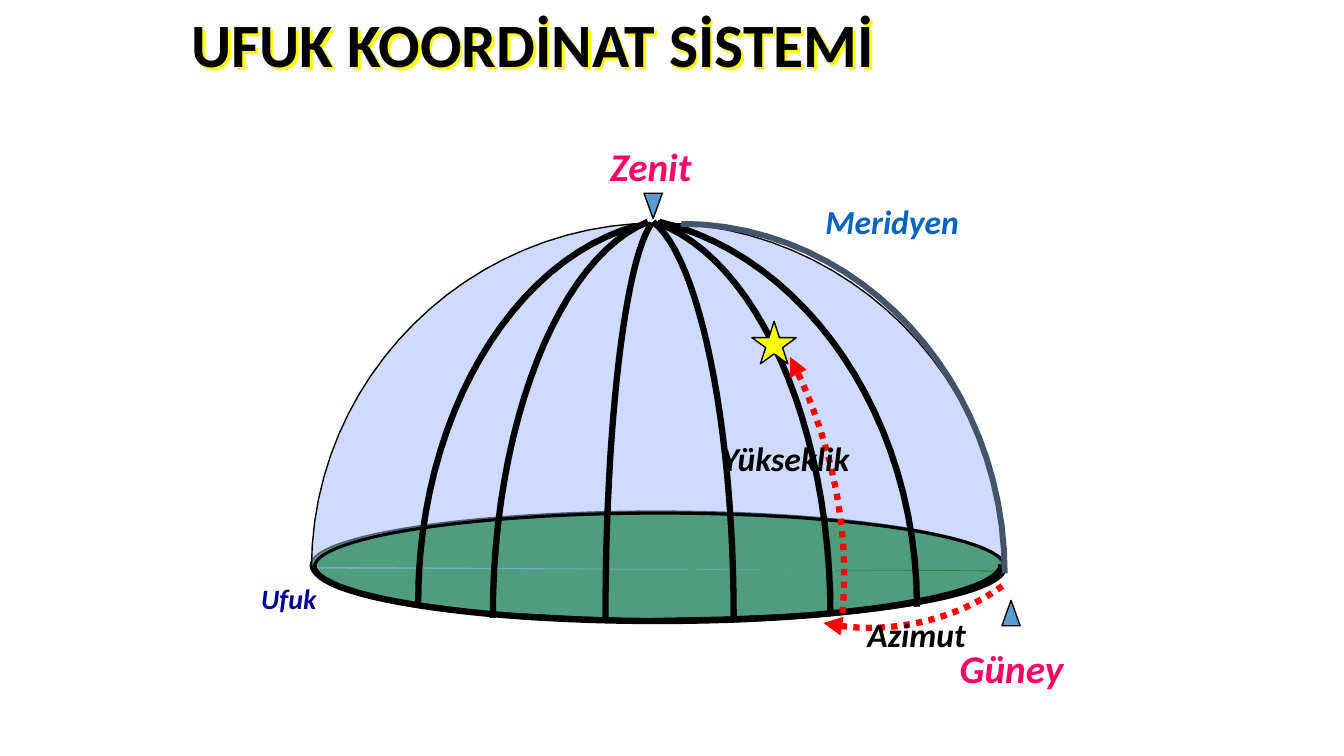
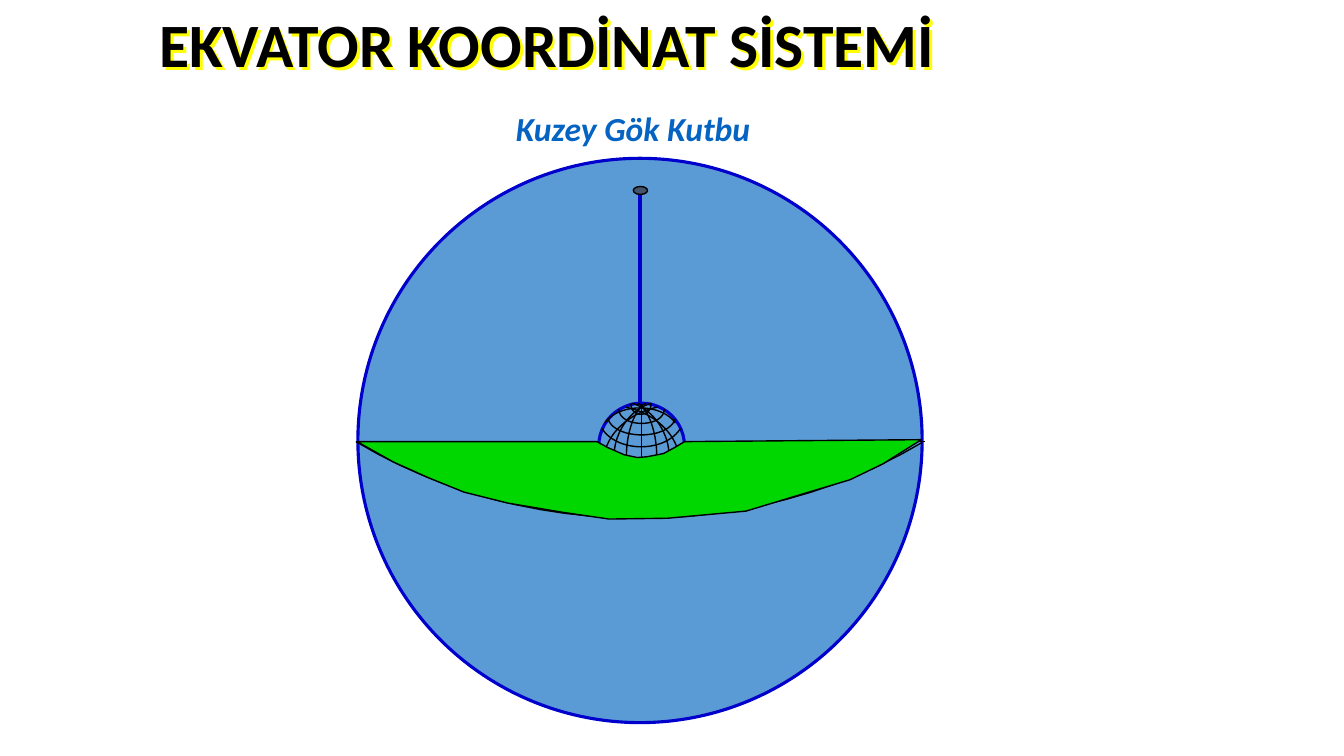
from typing import NamedTuple

from lxml.etree import SubElement
from pptx import Presentation
from pptx.dml.color import RGBColor
from pptx.enum.dml import MSO_LINE
from pptx.enum.shapes import MSO_CONNECTOR, MSO_SHAPE
from pptx.enum.text import MSO_ANCHOR, MSO_AUTO_SIZE, PP_ALIGN
from pptx.oxml.ns import qn
from pptx.util import Cm, Pt

BLACK, RED, YELLOW, PINK = "000000", "FF0000", "FFFF00", "FF0066"
GROUND, SKY, BLUE, SLATE = "008000", "9EB9FE", "5B9BD5", "44546A"
NAVY, LINK, DEEP, GREEN = "0000CC", "0563C1", "000099", "00D600"
FONT = "Calibri"
TITLE_ONLY = 5
STEPS = 24


class Box(NamedTuple):
    """A region of the page in centimetres."""
    left: float
    top: float
    width: float
    height: float

    def inner(self, x, y, width=0, height=0):
        """Return a box placed relative to this one."""
        return Box(self.left + x, self.top + y, width, height)

    def lengths(self):
        """Return left, top, width and height as lengths."""
        return [Cm(value) for value in self]


def rgb(value):
    """Turn a hex string into a colour."""
    return RGBColor.from_string(value)


def style(shape, fill=None, alpha=None, line=BLACK, weight=1, dotted=False, arrow=None):
    """Set the fill, transparency, outline and arrowhead of a shape."""
    shape.shadow.inherit = False
    if fill:
        shape.fill.solid()
        shape.fill.fore_color.rgb = rgb(fill)
    else:
        shape.fill.background()
    if alpha:
        color = shape.fill._xPr.find(qn("a:solidFill"))[0]
        SubElement(color, qn("a:alpha"), val=str(alpha * 1000))
    if not line:
        shape.line.fill.background()
        return
    shape.line.color.rgb = rgb(line)
    shape.line.width = Pt(weight)
    if dotted:
        shape.line.dash_style = MSO_LINE.ROUND_DOT
    if arrow:
        SubElement(shape.line._get_or_add_ln(), qn(f"a:{arrow}"), type="triangle")


def preset(page, kind, box, rotation=0, **look):
    """Add a preset shape."""
    shape = page.shapes.add_shape(kind, *box.lengths())
    shape.rotation = rotation
    style(shape, **look)


def outline(page, box, points, close=False, **look):
    """Draw an outline through points given relative to the box."""
    spots = [(Cm(box.left + x), Cm(box.top + y)) for x, y in points]
    builder = page.shapes.build_freeform(*spots[0])
    builder.add_line_segments(spots[1:], close=close)
    style(builder.convert_to_shape(), **look)


def straight(page, box, start, end, color=BLACK, weight=1):
    """Draw a straight line between two points of the box."""
    ends = [Cm(v) for x, y in (start, end) for v in (box.left + x, box.top + y)]
    line = page.shapes.add_connector(MSO_CONNECTOR.STRAIGHT, *ends)
    line.line.color.rgb = rgb(color)
    line.line.width = Pt(weight)
    SubElement(line._element.spPr, qn("a:effectLst"))


def bezier(*controls):
    """Return points along a cubic curve with four control points."""
    points = []
    for step in range(STEPS + 1):
        t = step / STEPS
        weights = ((1 - t) ** 3, 3 * t * (1 - t) ** 2, 3 * t * t * (1 - t), t ** 3)
        points.append(tuple(sum(w * c[axis] for w, c in zip(weights, controls))
                            for axis in (0, 1)))
    return points


def sweep(start, end, lead=(0.55, 0), trail=(1, 0.45)):
    """Return a curve whose controls are fractions of its span."""
    middle = [tuple(a + (b - a) * part for a, b, part in zip(start, end, parts))
              for parts in (lead, trail)]
    return bezier(start, *middle, end)


def arch(left, peak, right):
    """Return two quarter ellipses that meet at the peak."""
    return sweep(left, peak, (0, 0.55), (0.45, 1)) + sweep(peak, right)[1:]


def bow(left, right, depth, lean=0.2):
    """Return a symmetric sagging curve."""
    shift = (right[0] - left[0]) * lean
    drop = depth * 4 / 3
    return bezier(left, (left[0] + shift, left[1] + drop),
                  (right[0] - shift, right[1] + drop), right)


def write(frame, text, size=24, color=BLACK, italic=True, align=PP_ALIGN.CENTER,
          anchor=MSO_ANCHOR.TOP, spacing=1.0):
    """Put one formatted bold paragraph into a text frame."""
    frame.word_wrap = True
    frame.auto_size = MSO_AUTO_SIZE.NONE
    frame.vertical_anchor = anchor
    para = frame.paragraphs[0]
    para.alignment = align
    para.line_spacing = spacing
    span = para.add_run()
    span.text = text
    span.font.name, span.font.size = FONT, Pt(size)
    span.font.bold, span.font.italic = True, italic
    span.font.color.rgb = rgb(color)


def label(page, box, text, **look):
    """Add a text label."""
    write(page.shapes.add_textbox(*box.lengths()).text_frame, text, **look)


def titled_page(deck, text, left):
    """Add a page with a bold title that casts a yellow shadow."""
    page = deck.slides.add_slide(deck.slide_layouts[TITLE_ONLY])
    title = page.shapes.title
    title.left, title.top, title.width, title.height = Box(left, 0, 24.77, 2.39).lengths()
    write(title.text_frame, text, size=44, italic=False, align=PP_ALIGN.LEFT,
          anchor=MSO_ANCHOR.MIDDLE, spacing=0.9)
    effects = SubElement(title._element.spPr, qn("a:effectLst"))
    shadow = SubElement(effects, qn("a:outerShdw"), dist="35921", dir="2700000",
                        algn="ctr", rotWithShape="0")
    SubElement(shadow, qn("a:srgbClr"), val=YELLOW)
    return page


def sky_dome(page, box):
    """Draw the half sky above the horizon with its meridians and the star."""
    preset(page, MSO_SHAPE.OVAL, box.inner(0, 7.29, 17.42, 2.74), fill=GROUND)
    near_edge = [(0, 8.69), (0.36, 8.99), (0.99, 9.3), (2.13, 9.58), (4.04, 9.83),
                 (5.87, 9.91), (6.76, 9.96), (8.2, 10.01), (10.57, 9.96),
                 (13.61, 9.83), (15.24, 9.65), (16.51, 9.35), (17.22, 9.02), (17.55, 8.81)]
    for fill, line in ((GROUND, None), (SKY, BLACK)):
        outline(page, box, near_edge, fill=fill, alpha=50, line=line)
    outline(page, box, arch((0.03, 8.74), (8.76, 0.03), (17.5, 8.79)), fill=SKY, alpha=50)
    preset(page, MSO_SHAPE.OVAL, box.inner(0.1, 7.34, 17.42, 2.74), weight=2.25)
    outline(page, box, arch((0.08, 8.66), (8.76, 10.06), (17.42, 8.64)), weight=4.5)
    meridians = [((8.74, 0.03), (13.11, 9.93)), ((8.23, 0.1), (2.72, 9.58)),
                 ((8.51, 0), (4.6, 9.98)), ((8.61, 0.03), (7.44, 9.98)),
                 ((8.79, 0), (15.29, 9.7)), ((8.64, 0), (10.67, 9.98))]
    for top, foot in meridians:
        outline(page, box, sweep(top, foot, (0.57, 0.09), (1, 0.51)), weight=4.5)
    preset(page, MSO_SHAPE.STAR_5_POINT, box.inner(11.13, 2.51, 1.12, 1.07), fill=YELLOW)
    azimuth = bezier((12.93, 10.11), (14.6, 10.46), (16.31, 10.01), (17.45, 9.17))
    altitude = bezier((13.41, 9.86), (13.61, 7.8), (13.16, 5.51), (12.09, 3.4))
    for points, arrow in ((azimuth, "headEnd"), (altitude, "tailEnd")):
        outline(page, box, points, line=RED, weight=4.5, dotted=True, arrow=arrow)
    outline(page, box, sweep((9.35, 0.05), (17.5, 8.86)), line=SLATE, weight=4.25)


def dome_labels(page, box):
    """Name the parts of the dome and mark zenith and south."""
    for x, y, rotation in ((11.4, 1.42, 180), (20.42, 11.68, 0)):
        preset(page, MSO_SHAPE.ISOSCELES_TRIANGLE, box.inner(x, y, 0.46, 0.64),
               rotation, fill=BLUE)
    names = [("Zenit", 9.12, 0, 28, PINK), ("Güney", 18.21, 12.65, 28, PINK),
             ("Azimut", 15.82, 11.89, 24, BLACK), ("Yükseklik", 12.52, 7.47, 24, BLACK),
             ("Ufuk", 0, 11.07, 20, DEEP)]
    for text, x, y, size, color in names:
        label(page, box.inner(x, y, 4.9, 1.3), text, size=size, color=color)
    label(page, box.inner(15.72, 1.5, 4.9, 1.3), "Meridyen", color=LINK, align=PP_ALIGN.LEFT)


def globe(page, box):
    """Draw the small Earth with its grid of meridians and parallels."""
    preset(page, MSO_SHAPE.OVAL, box, fill=BLUE, line=NAVY, weight=2.25)
    middle = box.width / 2
    straight(page, box, (middle, 0), (middle, 1.37))
    for start, end, top, foot in ((-0.1, 0.38, 0, 1.3), (-0.25, 0.69, 0, 1.3),
                                  (-0.41, 0.94, 0.1, 1.4)):
        for side in (1, -1):
            outline(page, box, sweep((middle + side * start, top), (middle + side * end, foot),
                                     (0.6, 0.12), (1, 0.6)))
    parallels = [(0.15, 1.93, 0.5, -0.38, 0.2), (0.51, 1.65, 0.15, 0.36, 0),
                 (0.81, 1.32, 0.02, 0.26, 0), (0.08, 2.06, 0.64, 0.46, 0.2),
                 (0.23, 1.93, 0.39, 0.41, 0.1)]
    for left, right, y, depth, lean in parallels:
        outline(page, box, bow((left, y), (right, y), depth, lean))


def celestial_sphere(page, box):
    """Draw the sky sphere with its axis, equator plane and Earth."""
    preset(page, MSO_SHAPE.OVAL, box.inner(0.05, 0, 14.22, 14.22),
           fill=BLUE, line=NAVY, weight=2.25)
    straight(page, box, (7.16, 6.48), (7.16, 0.89), NAVY, 3)
    outline(page, box, bow((0, 7.14), (14.27, 7.16), 1.92, 0.3))
    straight(page, box, (0, 7.14), (14.33, 7.14))
    globe(page, box.inner(6.12, 6.17, 2.16, 2.16))
    plane = [(0.03, 7.14), (6.07, 7.14), (6.35, 7.29), (6.76, 7.47), (7.09, 7.54),
             (7.34, 7.52), (7.75, 7.44), (8.03, 7.29), (8.28, 7.14), (14.25, 7.09),
             (13.28, 7.7), (12.45, 8.1), (11.25, 8.46), (9.83, 8.89), (7.85, 9.07),
             (6.38, 9.09), (5.21, 8.92), (3.84, 8.69), (2.72, 8.41), (1.83, 8.05),
             (0.94, 7.65)]
    outline(page, box, plane, close=True, fill=GREEN)
    preset(page, MSO_SHAPE.OVAL, box.inner(6.99, 0.71, 0.36, 0.2), fill=SLATE)


def main():
    """Build and save the two slides."""
    deck = Presentation()
    deck.slide_width, deck.slide_height = Cm(33.87), Cm(19.05)
    horizon = titled_page(deck, "UFUK KOORDİNAT SİSTEMİ", 4.57)
    sky_dome(horizon, Box(7.82, 5.59, 17.53, 10.08))
    dome_labels(horizon, Box(4.83, 3.45, 23.11, 13.95))
    equator = titled_page(deck, "EKVATOR KOORDİNAT SİSTEMİ", 3.76)
    celestial_sphere(equator, Box(8.97, 3.99, 14.27, 14.22))
    label(equator, Box(12.75, 2.59, 11.4, 1.3), "Kuzey Gök Kutbu",
          color=LINK, align=PP_ALIGN.LEFT)
    deck.save("out.pptx")


if __name__ == "__main__":
    main()
